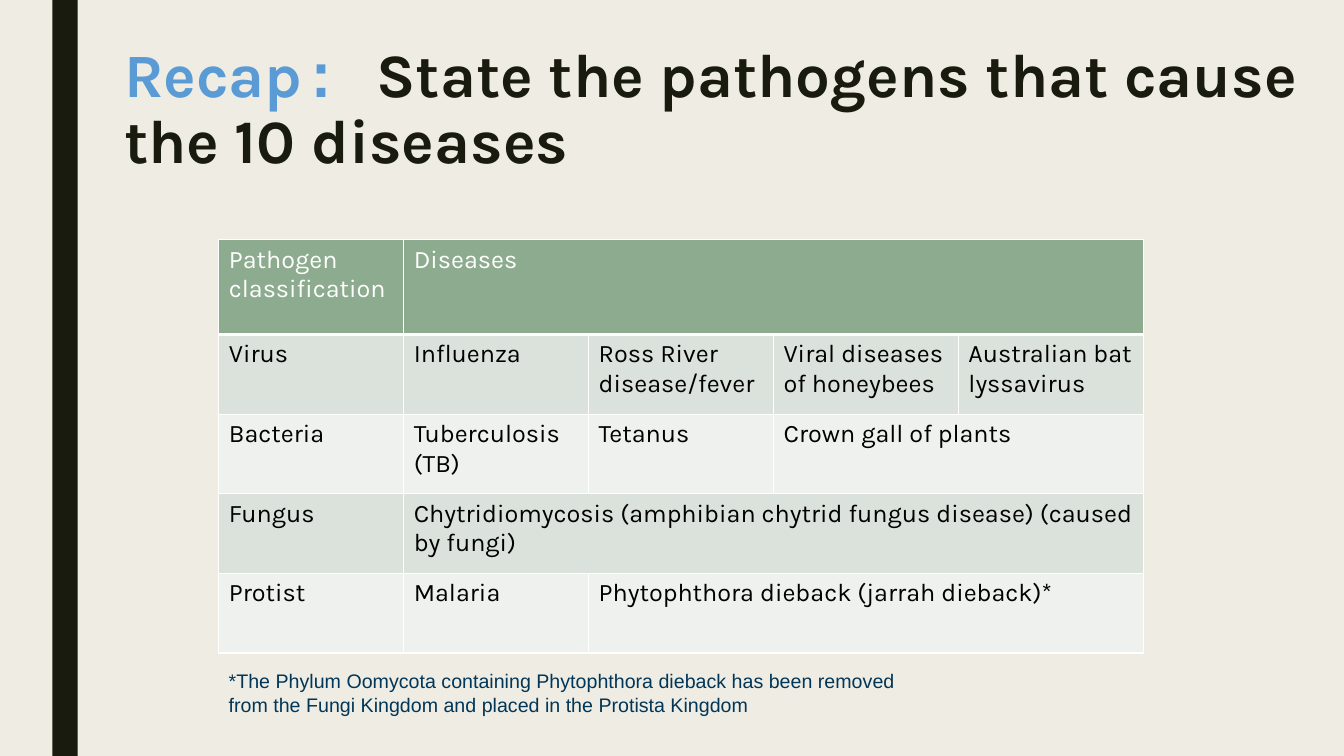
from lxml import etree
from pptx import Presentation
from pptx import util as u
from pptx.dml.color import RGBColor
from pptx.enum import shapes, text
from pptx.oxml import ns

SLIDE_WIDTH, SLIDE_HEIGHT = 13.33, 7.5
COLORS = {
    "background": "EFEDE3",
    "dark": "191B0E",
    "recap": "5B9BD5",
    "header": "8DAB8E",
    "odd_row": "DBE2DB",
    "even_row": "EEF1EE",
    "white": "FFFFFF",
    "black": "000000",
    "footnote": "013658",
}
COLUMN_COUNT = 5
ROW_HEIGHTS = [0.94] + [0.79] * 4
PATHOGEN_ROWS = [
    ["Pathogen classification", "Diseases"],
    ["Virus", "Influenza", "Ross River disease/fever",
     "Viral diseases of honeybees", "Australian bat lyssavirus"],
    ["Bacteria", "Tuberculosis (TB)", "Tetanus", "Crown gall of plants"],
    ["Fungus", "Chytridiomycosis (amphibian chytrid fungus disease) (caused by fungi)"],
    ["Protist", "Malaria", "Phytophthora dieback (jarrah dieback)*"],
]
TITLE_RUNS = [
    ("Recap", "Karla", "recap"),
    (": ", "Courier New", "recap"),
    ("State the pathogens that cause the 10 diseases", "Karla", "dark"),
]
FOOTNOTE = ("*The Phylum Oomycota containing Phytophthora dieback has been removed\v"
            "from the Fungi Kingdom and placed in the Protista Kingdom")


def color(name):
    return RGBColor.from_string(COLORS[name])


def inches(box):
    return [u.Inches(length) for length in box]


def format_run(run, font_name, size, color_name, bold=False):
    run.font.name = font_name
    run.font.size = u.Pt(size)
    run.font.bold = bold
    run.font.color.rgb = color(color_name)


def add_side_bar(slide, box):
    bar = slide.shapes.add_shape(shapes.MSO_SHAPE.RECTANGLE, *inches(box))
    bar.shadow.inherit = False
    bar.fill.solid()
    bar.fill.fore_color.rgb = color("dark")
    bar.line.fill.background()


def fill_title(slide, box):
    title = slide.shapes.title
    title.left, title.top, title.width, title.height = inches(box)
    frame = title.text_frame
    frame.word_wrap = True
    frame.auto_size = text.MSO_AUTO_SIZE.NONE
    frame.vertical_anchor = text.MSO_ANCHOR.TOP
    paragraph = frame.paragraphs[0]
    paragraph.alignment = text.PP_ALIGN.LEFT
    paragraph.line_spacing = 0.89
    for words, font_name, color_name in TITLE_RUNS:
        run = paragraph.add_run()
        run.text = words
        format_run(run, font_name, 44, color_name, bold=True)


def set_borders(cell, bottom_width):
    properties = cell._tc.get_or_add_tcPr()
    widths = {"lnL": 1, "lnR": 1, "lnT": 1, "lnB": bottom_width}
    for position, (side, width) in enumerate(widths.items()):
        line = etree.Element(ns.qn(f"a:{side}"), w=str(u.Pt(width)))
        fill = etree.SubElement(line, ns.qn("a:solidFill"))
        etree.SubElement(fill, ns.qn("a:srgbClr"), val=COLORS["white"])
        properties.insert(position, line)


def add_pathogen_table(slide, box):
    table = slide.shapes.add_table(len(PATHOGEN_ROWS), COLUMN_COUNT, *inches(box)).table
    for column in table.columns:
        column.width = u.Inches(box[2] / COLUMN_COUNT)
    for row_index, entries in enumerate(PATHOGEN_ROWS):
        table.rows[row_index].height = u.Inches(ROW_HEIGHTS[row_index])
        is_header = row_index == 0
        fill_name = "header" if is_header else "odd_row" if row_index % 2 else "even_row"
        for column_index in range(COLUMN_COUNT):
            cell = table.cell(row_index, column_index)
            cell.fill.solid()
            cell.fill.fore_color.rgb = color(fill_name)
            set_borders(cell, 3 if is_header else 1)
        for column_index, entry in enumerate(entries):
            cell = table.cell(row_index, column_index)
            cell.text = entry
            format_run(cell.text_frame.paragraphs[0].runs[0], "Karla", 18,
                       "white" if is_header else "black")
        if len(entries) < COLUMN_COUNT:
            last_entry = table.cell(row_index, len(entries) - 1)
            last_entry.merge(table.cell(row_index, COLUMN_COUNT - 1))


def add_footnote(slide, box):
    frame = slide.shapes.add_textbox(*inches(box)).text_frame
    frame.word_wrap = False
    frame.auto_size = text.MSO_AUTO_SIZE.SHAPE_TO_FIT_TEXT
    paragraph = frame.paragraphs[0]
    paragraph.text = FOOTNOTE
    for run in paragraph.runs:
        format_run(run, "Arial", 14, "footnote")


def main():
    presentation = Presentation()
    presentation.slide_width = u.Inches(SLIDE_WIDTH)
    presentation.slide_height = u.Inches(SLIDE_HEIGHT)
    slide = presentation.slides.add_slide(presentation.slide_layouts[5])
    slide.background.fill.solid()
    slide.background.fill.fore_color.rgb = color("background")

    table_left, table_top = 2.17, 2.38
    table_height = sum(ROW_HEIGHTS)
    add_side_bar(slide, (0.52, 0, 0.25, SLIDE_HEIGHT))
    fill_title(slide, (1.13, 0.4, 12.1, 1.62))
    add_pathogen_table(slide, (table_left, table_top, 9.17, table_height))
    add_footnote(slide, (table_left, table_top + table_height + 0.11, 6.84, 0.57))
    presentation.save("out.pptx")


if __name__ == "__main__":
    main()
